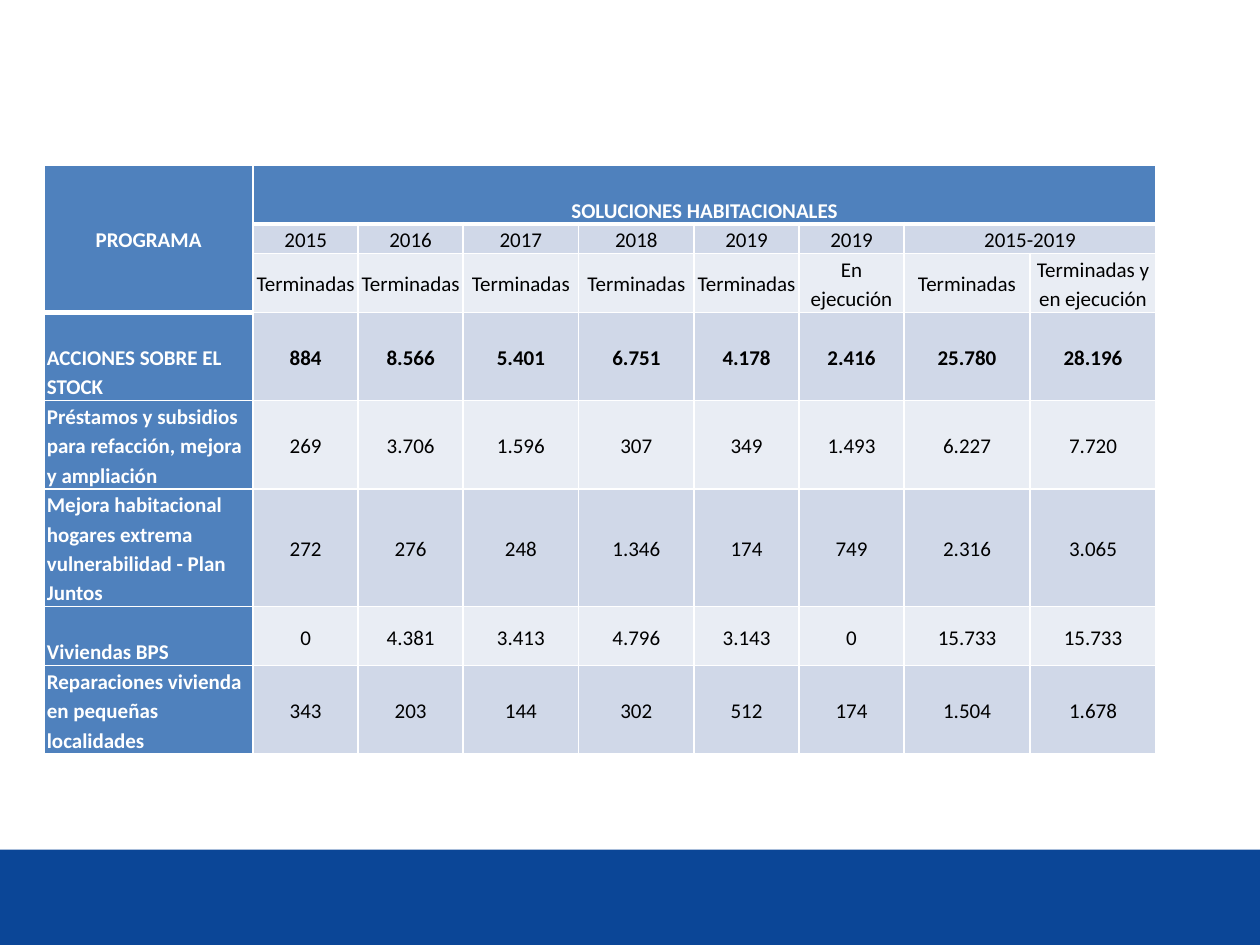
from lxml.etree import SubElement
from pptx import Presentation
from pptx.dml.color import RGBColor
from pptx.enum.shapes import MSO_SHAPE
from pptx.enum.text import MSO_ANCHOR, PP_ALIGN
from pptx.oxml.ns import qn
from pptx.util import Pt

COLORS = {
    "footer": "0B4697", "header": "4F81BD", "odd_band": "D0D8E8",
    "even_band": "E9EDF4", "light": "FFFFFF", "dark": "000000",
}
DONE = "Terminadas"
ROWS = [
    ["PROGRAMA", "SOLUCIONES HABITACIONALES"] + [""] * 7,
    ["", "2015", "2016", "2017", "2018", "2019", "2019", "2015-2019", ""],
    [""] + [DONE] * 5 + ["En ejecución", DONE, "Terminadas y en ejecución"],
    ["ACCIONES SOBRE EL STOCK", "884", "8.566", "5.401", "6.751", "4.178", "2.416", "25.780", "28.196"],
    ["Préstamos y subsidios para refacción, mejora y ampliación",
     "269", "3.706", "1.596", "307", "349", "1.493", "6.227", "7.720"],
    ["Mejora habitacional hogares extrema vulnerabilidad - Plan Juntos",
     "272", "276", "248", "1.346", "174", "749", "2.316", "3.065"],
    ["Viviendas BPS", "0", "4.381", "3.413", "4.796", "3.143", "0", "15.733", "15.733"],
    ["Reparaciones vivienda en pequeñas localidades",
     "343", "203", "144", "302", "512", "174", "1.504", "1.678"],
]
MERGES = [((0, 0), (2, 0)), ((0, 1), (0, 8)), ((1, 7), (1, 8))]
COLUMN_WIDTHS = [119.5, 60, 60, 66, 66, 60, 60, 72, 72]
LINES_PER_ROW = [2, 1, 2, 3, 3, 4, 2, 3]
LINE_HEIGHT = 16.8
SIDE_MARGIN = 1.6
TOTAL_ROW = 3
LOWERED = {(0, 1), (3, 0), (6, 0)}
HEAVY_BELOW = {(2, 0)} | {(0, column) for column in range(1, 9)}


def rgb(name):
    return RGBColor.from_string(COLORS[name])


def add_borders(cell, row, column):
    widths = {
        "a:lnL": 1, "a:lnR": 1,
        "a:lnT": 3 if (row - 1, column) in HEAVY_BELOW else 1,
        "a:lnB": 3 if (row, column) in HEAVY_BELOW else 1,
    }
    properties = cell._tc.get_or_add_tcPr()
    for position, (side, width) in enumerate(widths.items()):
        line = SubElement(properties, qn(side), w=str(Pt(width)))
        properties.insert(position, line)
        fill = SubElement(line, qn("a:solidFill"))
        SubElement(fill, qn("a:srgbClr"), val=COLORS["light"])


def style_cell(cell, row, column, wording):
    is_header = row == 0 or column == 0
    band = "odd_band" if row % 2 else "even_band"
    cell.fill.solid()
    cell.fill.fore_color.rgb = rgb("header" if is_header else band)
    layout = {
        "margin_left": Pt(SIDE_MARGIN), "margin_right": Pt(SIDE_MARGIN), "margin_bottom": 0,
        "margin_top": Pt(LINE_HEIGHT if (row, column) in LOWERED else 0),
        "vertical_anchor": MSO_ANCHOR.MIDDLE,
    }
    for name, value in layout.items():
        setattr(cell, name, value)
    add_borders(cell, row, column)
    paragraph = cell.text_frame.paragraphs[0]
    is_program = column == 0 and row >= TOTAL_ROW
    paragraph.alignment = PP_ALIGN.LEFT if is_program else PP_ALIGN.CENTER
    paragraph.line_spacing = 1.15
    font_format = {"name": "Calibri", "size": Pt(12), "bold": is_header or row == TOTAL_ROW}
    fonts = [paragraph.font]
    if wording:
        run = paragraph.add_run()
        run.text = wording
        fonts.append(run.font)
    for font in fonts:
        for name, value in font_format.items():
            setattr(font, name, value)
        font.color.rgb = rgb("light" if is_header else "dark")


def main():
    deck = Presentation()
    deck.slide_width, deck.slide_height = Pt(720), Pt(540)
    slide = deck.slides.add_slide(deck.slide_layouts[6])

    footer = slide.shapes.add_shape(MSO_SHAPE.RECTANGLE, 0, Pt(485.5), Pt(720), Pt(54.5))
    footer.shadow.inherit = False
    footer.fill.solid()
    footer.fill.fore_color.rgb = rgb("footer")
    footer.line.fill.background()

    heights = [lines * LINE_HEIGHT for lines in LINES_PER_ROW]
    programs = slide.shapes.add_table(
        len(ROWS), len(COLUMN_WIDTHS), Pt(25.2), Pt(94.4),
        Pt(sum(COLUMN_WIDTHS)), Pt(sum(heights)),
    ).table
    for column, width in zip(programs.columns, COLUMN_WIDTHS):
        column.width = Pt(width)
    for row, height in zip(programs.rows, heights):
        row.height = Pt(height)
    for start, end in MERGES:
        programs.cell(*start).merge(programs.cell(*end))
    for row, wordings in enumerate(ROWS):
        for column, wording in enumerate(wordings):
            style_cell(programs.cell(row, column), row, column, wording)

    deck.save("out.pptx")


if __name__ == "__main__":
    main()
